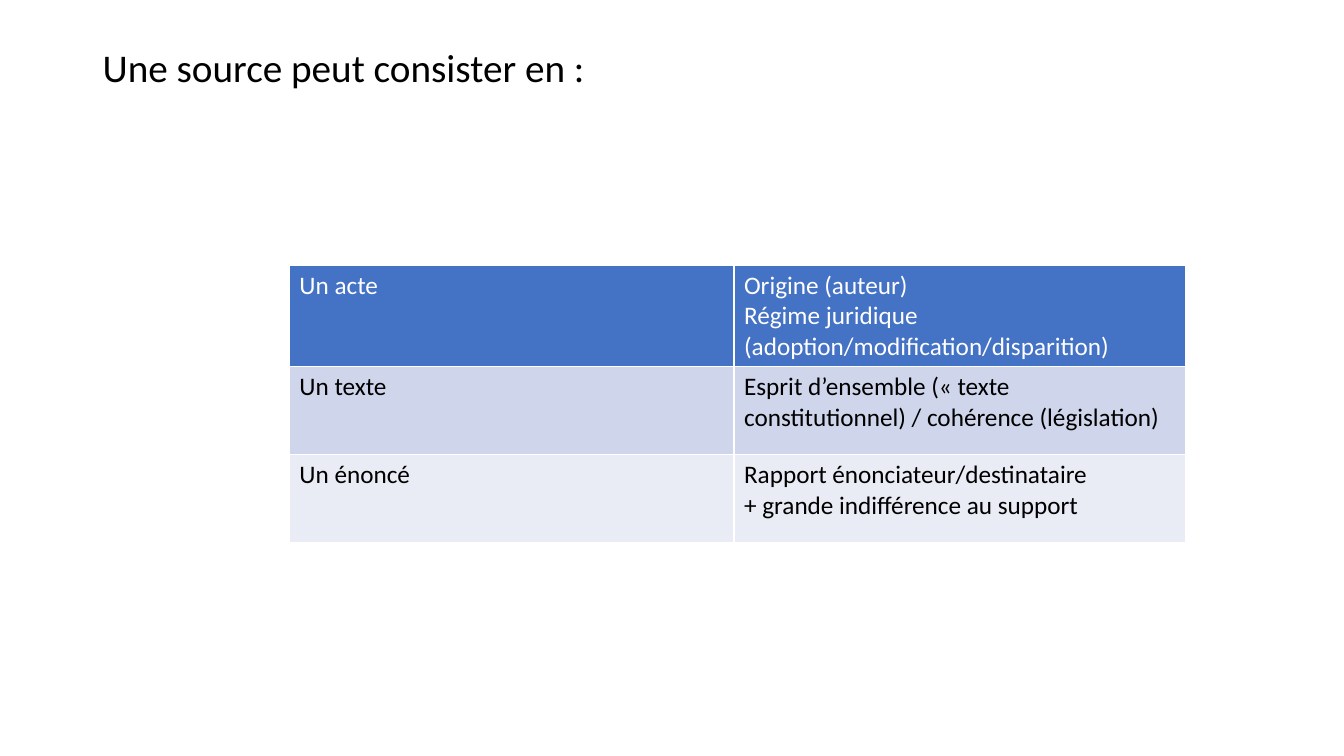
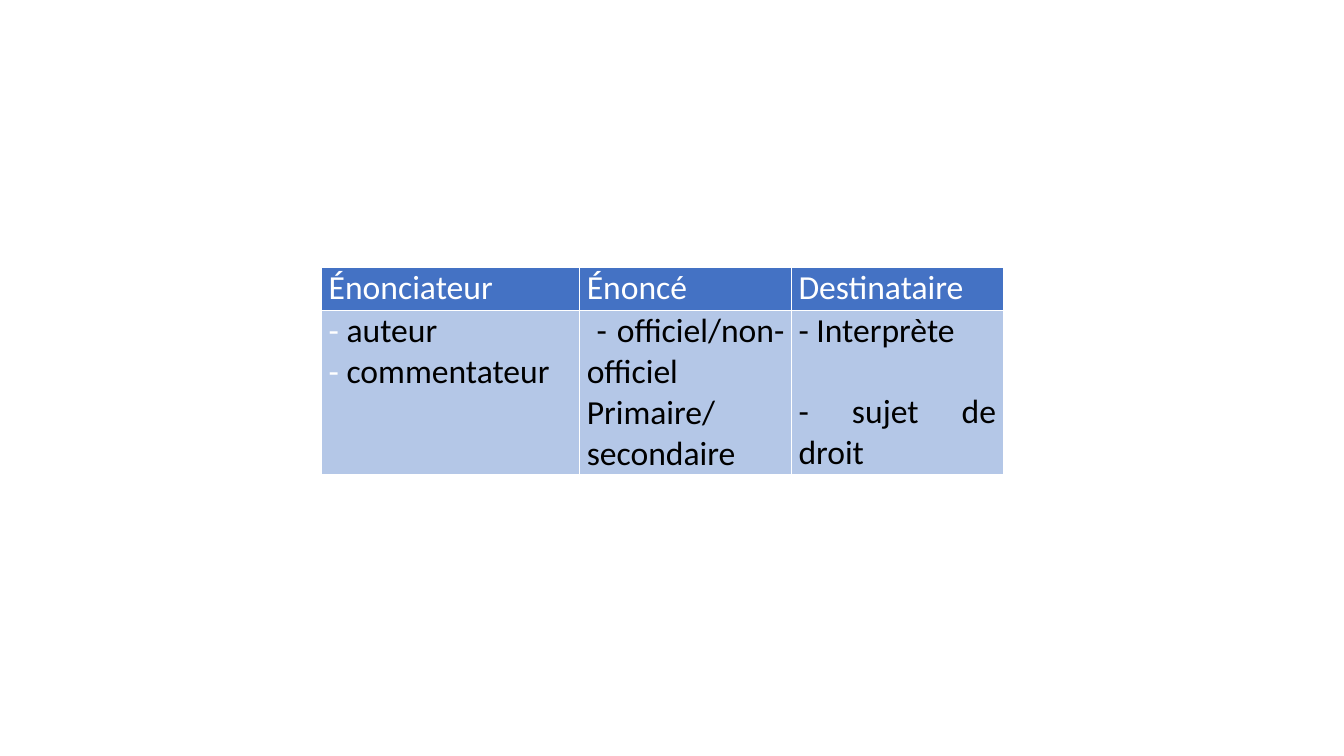
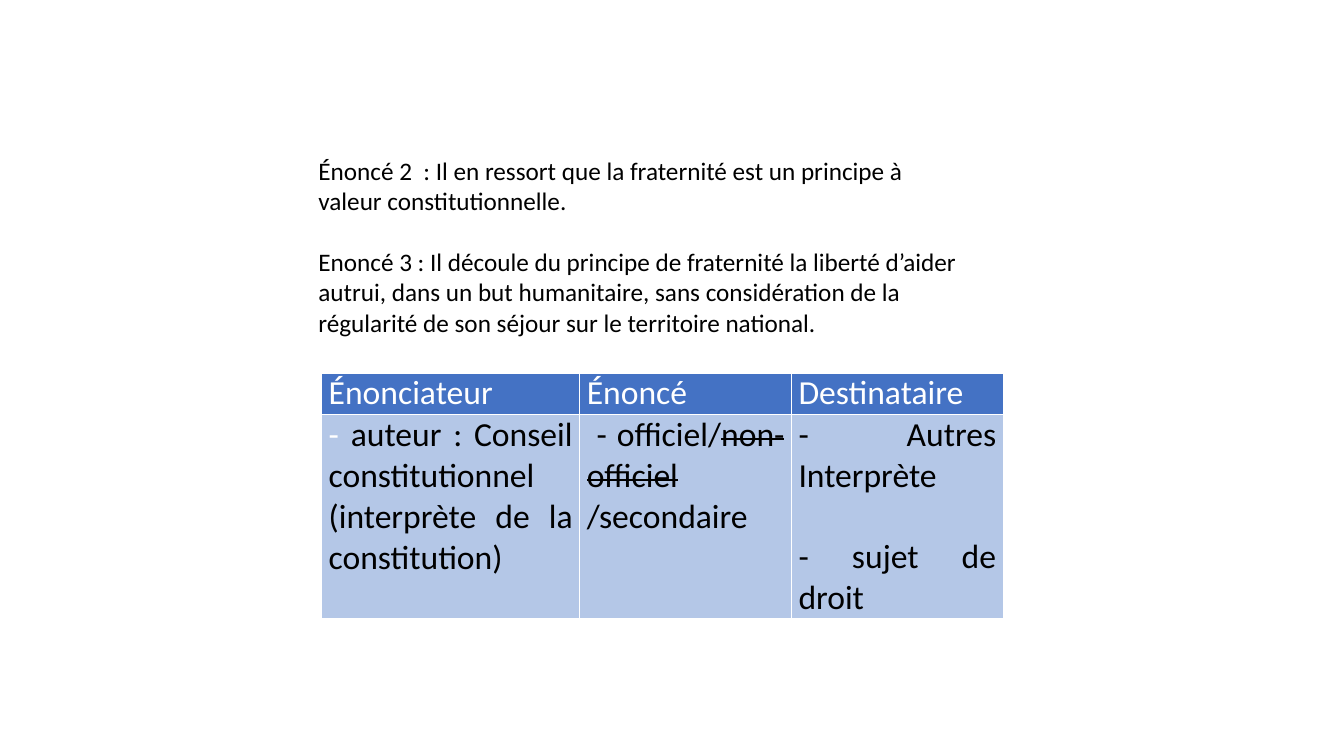
from dataclasses import dataclass

import pptx
import pptx.dml.color
import pptx.enum.text
import pptx.oxml
import pptx.oxml.ns
import pptx.util
from pptx.util import Inches

RGBColor = pptx.dml.color.RGBColor
WHITE = RGBColor(0xFF, 0xFF, 0xFF)
BLACK = RGBColor(0x00, 0x00, 0x00)
HEADER_BLUE = RGBColor(0x44, 0x72, 0xC4)
BAND_DARK = RGBColor(0xCF, 0xD5, 0xEA)
BAND_LIGHT = RGBColor(0xE9, 0xEB, 0xF5)
PALE_BLUE = RGBColor(0xB4, 0xC7, 0xE7)

FONT = "Calibri"
TITLE_SIZE = 28
BODY_SIZE = 18
ROLE_SIZE = 24
JUSTIFIED = pptx.enum.text.PP_ALIGN.JUSTIFY

ROLE_LEFT = 3.19
ROLE_COLUMNS = [2.56, 2.1, 2.1]
ROLE_HEADER = ["Énonciateur", "Énoncé", "Destinataire"]


@dataclass
class Passage:
    text: str
    color: RGBColor = BLACK
    struck: bool = False


@dataclass
class Spaced:
    text: str
    before: float


WHITE_DASH = Passage("- ", WHITE)


def set_font(font, size, color):
    font.name = FONT
    font.size = pptx.util.Pt(size)
    font.bold = False
    font.color.rgb = color


def write_paragraph(paragraph, content, size, color):
    if isinstance(content, list):
        for passage in content:
            run = paragraph.add_run()
            run.text = passage.text
            set_font(run.font, size, passage.color)
            if passage.struck:
                run._r.get_or_add_rPr().set("strike", "sngStrike")
        return
    if isinstance(content, Spaced):
        paragraph.space_before = pptx.util.Pt(content.before)
        content = content.text
    paragraph.text = content
    set_font(paragraph.font, size, color)


def write_paragraphs(frame, contents, size, color, alignment=None):
    for index, content in enumerate(contents):
        paragraph = frame.add_paragraph() if index else frame.paragraphs[0]
        paragraph.alignment = alignment
        write_paragraph(paragraph, content, size, color)


def add_text(slide, left, top, width, height, contents, size):
    box = slide.shapes.add_textbox(
        Inches(left), Inches(top), Inches(width), Inches(height))
    frame = box.text_frame
    frame.word_wrap = True
    write_paragraphs(frame, contents, size, BLACK)
    return frame


def add_title(slide, title):
    frame = add_text(slide, 0.92, 0.4, 11.5, 1.45, [title], TITLE_SIZE)
    frame.margin_top = Inches(0.08)
    frame.paragraphs[0].line_spacing = 0.9


def add_borders(cell):
    properties = cell._tc.get_or_add_tcPr()
    for position, side in enumerate(("lnL", "lnR", "lnT", "lnB")):
        properties.insert(position, pptx.oxml.parse_xml(
            f'<a:{side} {pptx.oxml.ns.nsdecls("a")} w="12700"><a:solidFill>'
            f'<a:srgbClr val="{WHITE}"/></a:solidFill></a:{side}>'))


def add_grid(slide, left, top, columns, heights, rows, fills, size,
             alignment=None, tight=False):
    table = slide.shapes.add_table(
        len(rows), len(columns), Inches(left), Inches(top),
        Inches(sum(columns)), Inches(sum(heights))).table
    for column, width in zip(table.columns, columns):
        column.width = Inches(width)
    for index, (height, row, fill) in enumerate(zip(heights, rows, fills)):
        table.rows[index].height = Inches(height)
        for cell, contents in zip(table.rows[index].cells, row):
            cell.fill.solid()
            cell.fill.fore_color.rgb = fill
            add_borders(cell)
            if tight:
                cell.margin_left = cell.margin_right = Inches(0.07)
                cell.margin_top = cell.margin_bottom = 0
            write_paragraphs(cell.text_frame, contents, size,
                             BLACK if index else WHITE, alignment)


def add_role_table(slide, top, heights, roles):
    header = [[label] for label in ROLE_HEADER]
    add_grid(slide, ROLE_LEFT, top, ROLE_COLUMNS, heights, [header, roles],
             [HEADER_BLUE, PALE_BLUE], ROLE_SIZE, JUSTIFIED, tight=True)


def build_source_slide(slide):
    add_title(slide, "Une source peut consister en :")
    rows = [
        [["Un acte"],
         ["Origine (auteur)",
          "Régime juridique (adoption/modification/disparition)"]],
        [["Un texte"],
         ["Esprit d’ensemble (« texte constitutionnel) / "
          "cohérence (législation)"]],
        [["Un énoncé"],
         ["Rapport énonciateur/destinataire",
          "+ grande indifférence au support"]],
    ]
    add_grid(slide, 2.87, 2.63, [4.41, 4.48], [1.01, 0.87, 0.87], rows,
             [HEADER_BLUE, BAND_DARK, BAND_LIGHT], BODY_SIZE)


def build_roles_slide(slide):
    add_role_table(slide, 2.65, [0.43, 1.63], [
        [[WHITE_DASH, Passage("auteur")],
         [WHITE_DASH, Passage("commentateur")]],
        [" - officiel/non-officiel", "Primaire/secondaire"],
        ["- Interprète", Spaced("- sujet de droit", 29)],
    ])


def build_fraternity_slide(slide):
    add_role_table(slide, 3.7, [0.41, 2.03], [
        [[WHITE_DASH, Passage("auteur : Conseil constitutionnel "
                              "(interprète de la constitution)")]],
        [[Passage(" - officiel/"), Passage("non-officiel", struck=True)],
         "/secondaire"],
        ["- Autres Interprète", Spaced("- sujet de droit", 29)],
    ])
    add_text(slide, 3.06, 1.49, 6.57, 2.22, [
        "Énoncé 2  : Il en ressort que la fraternité est un principe "
        "à valeur constitutionnelle.",
        Spaced("Enoncé 3 : Il découle du principe de fraternité la liberté "
               "d’aider autrui, dans un but humanitaire, sans considération "
               "de la régularité de son séjour sur le territoire national.",
               22),
    ], BODY_SIZE)


def main():
    presentation = pptx.Presentation()
    presentation.slide_width = Inches(13.33)
    presentation.slide_height = Inches(7.5)
    blank = presentation.slide_layouts[6]
    for build in (build_source_slide, build_roles_slide,
                  build_fraternity_slide):
        build(presentation.slides.add_slide(blank))
    presentation.save("out.pptx")


if __name__ == "__main__":
    main()
